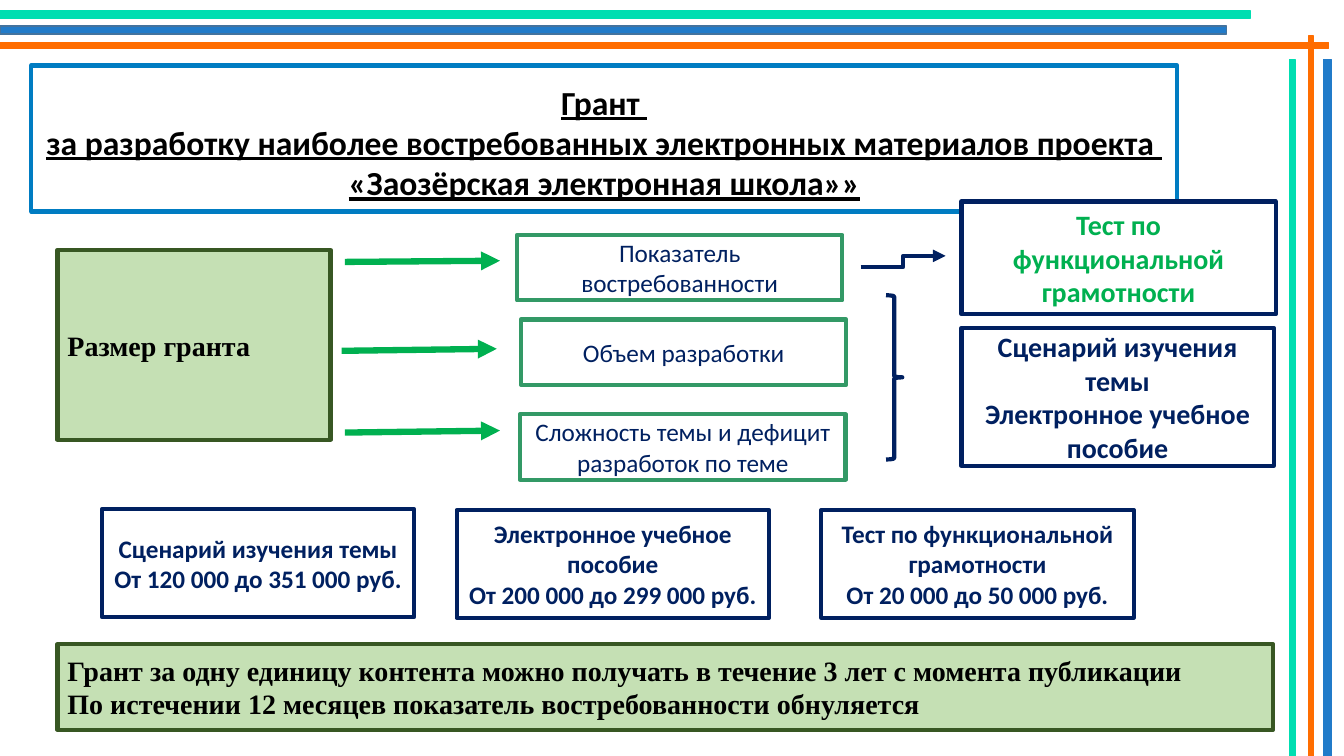
import pptx
import pptx.dml.color
import pptx.enum.dml
import pptx.enum.shapes
import pptx.enum.text
import pptx.oxml
import pptx.oxml.ns
import pptx.util
from dataclasses import dataclass

Cm = pptx.util.Cm
Preset = pptx.enum.shapes.MSO_SHAPE
Connector = pptx.enum.shapes.MSO_CONNECTOR
Align = pptx.enum.text.PP_ALIGN


@dataclass(frozen=True)
class Theme:
    teal: str = "00DEB1"
    blue: str = "217BC9"
    blue_edge: str = "43739E"
    orange: str = "FF6D00"
    title_edge: str = "007CC2"
    criterion_edge: str = "339966"
    navy: str = "002060"
    green: str = "00B050"
    pale_green: str = "C5E0B4"
    dark_green: str = "385723"
    white: str = "FFFFFF"
    black: str = "000000"
    sans: str = "Calibri"
    serif: str = "Times New Roman"
    title_size: int = 24
    large_size: int = 20
    body_size: int = 18
    bar_line: float = 1
    box_line: float = 3
    arrow_line: float = 4.5


class GrantSlide:
    def __init__(self, slide, theme):
        self.shapes = slide.shapes
        self.theme = theme

    def set_line(self, line, color, width):
        line.color.rgb = pptx.dml.color.RGBColor.from_string(color)
        line.width = pptx.util.Pt(width)

    def shape(self, place, fill, edge, width, preset=Preset.RECTANGLE):
        shape = self.shapes.add_shape(preset, *map(Cm, place))
        shape.shadow.inherit = False
        if fill:
            shape.fill.solid()
            shape.fill.fore_color.rgb = pptx.dml.color.RGBColor.from_string(fill)
        else:
            shape.fill.background()
        self.set_line(shape.line, edge, width)
        return shape

    def box(self, place, lines, fill, edge, align=Align.CENTER, **style):
        box = self.shape(place, fill, edge, self.theme.box_line)
        frame = box.text_frame
        frame.word_wrap = True
        frame.vertical_anchor = pptx.enum.text.MSO_ANCHOR.MIDDLE
        color = style.pop("color")
        size = style.pop("size")
        formats = {"name": self.theme.sans, "size": pptx.util.Pt(size), **style}
        for index, line in enumerate(lines):
            para = frame.add_paragraph() if index else frame.paragraphs[0]
            para.alignment = align
            span = para.add_run()
            span.text = line
            for key, value in formats.items():
                setattr(span.font, key, value)
            span.font.color.rgb = pptx.dml.color.RGBColor.from_string(color)
        return box

    def panel(self, place, lines):
        theme = self.theme
        self.box(place, lines, theme.pale_green, theme.dark_green, Align.LEFT,
                 name=theme.serif, size=theme.large_size, color=theme.black, bold=True)

    def arrow(self, start, end, color, width, kind=Connector.STRAIGHT):
        arrow = self.shapes.add_connector(kind, *map(Cm, start + end))
        self.set_line(arrow.line, color, width)
        namespace = pptx.oxml.ns.nsdecls("a")
        head = pptx.oxml.parse_xml(f'<a:tailEnd {namespace} type="triangle"/>')
        arrow.line._get_or_add_ln().append(head)
        properties = arrow._element.spPr
        properties.append(pptx.oxml.parse_xml(f"<a:effectLst {namespace}/>"))


def main():
    deck = pptx.Presentation()
    deck.slide_width, deck.slide_height = Cm(33.87), Cm(19.05)
    theme = Theme()
    page = GrantSlide(deck.slides.add_slide(deck.slide_layouts[6]), theme)

    # Decorative bars along the top and right edges
    for place, fill, edge in (
        ((0, 0.66, 30.91, 0.2), theme.blue, theme.blue_edge),
        ((0, 0.28, 31.52, 0.18), theme.teal, theme.teal),
        ((0, 1.07, 33.48, 0.15), theme.orange, theme.orange),
        ((33.35, 1.5, 0.2, 17.55), theme.blue, theme.blue),
        ((32.49, 1.5, 0.15, 17.55), theme.teal, theme.teal),
        ((32.97, 0.91, 0.13, 18.14), theme.orange, theme.orange),
    ):
        page.shape(place, fill, edge, theme.bar_line)

    # Title
    title = page.box(
        (0.79, 1.65, 28.88, 3.68),
        ("Грант ",
         "за разработку наиболее востребованных электронных материалов проекта ",
         "«Заозёрская электронная школа»»"),
        None, theme.title_edge, size=theme.title_size, color=theme.black,
        bold=True, underline=True)
    title.text_frame.margin_top = Cm(0.3)

    # Grant size and the criteria it depends on
    page.panel((1.45, 6.3, 6.88, 4.78), ("Размер гранта",))
    for left, top, label in (
        (13.03, 5.92, "Показатель востребованности"),
        (13.13, 8.05, "Объем разработки"),
        (13.11, 10.44, "Сложность темы и дефицит разработок по теме"),
    ):
        page.box((left, top, 8.2, 1.65), (label,), theme.white,
                 theme.criterion_edge, size=theme.body_size, color=theme.navy)
    for left, top, rise in ((8.69, 6.6, 0.03), (8.61, 8.84, 0.05), (8.69, 10.9, 0.05)):
        page.arrow((left, top), (left + 3.91, top - rise), theme.green, theme.arrow_line)

    # Links from the criteria to the material types
    page.shape((22.33, 7.44, 0.41, 4.14), None, theme.navy, theme.box_line,
               Preset.RIGHT_BRACE)
    page.arrow((21.69, 6.73), (23.83, 6.45), theme.navy, theme.box_line, Connector.ELBOW)

    # Material types
    for place, lines, color in (
        ((24.23, 8.26, 7.87, 3.48),
         ("Сценарий изучения темы", "Электронное учебное пособие"), theme.navy),
        ((24.23, 5.08, 7.92, 2.84),
         ("Тест по функциональной грамотности",), theme.green),
    ):
        page.box(place, lines, theme.white, theme.navy,
                 size=theme.large_size, color=color, bold=True)

    # Grant amounts
    for left, top, material, amount in (
        (2.57, 12.83, "Сценарий изучения темы", "От 120 000 до 351 000 руб."),
        (11.51, 12.85, "Электронное учебное пособие", "От 200 000 до 299 000 руб."),
        (20.7, 12.85, "Тест по функциональной грамотности", "От 20 000 до 50 000 руб."),
    ):
        page.box((left, top, 7.87, 2.72), (material, amount), theme.white, theme.navy,
                 size=theme.body_size, color=theme.navy, bold=True)

    # Terms of the grant
    page.panel(
        (1.45, 16.23, 30.63, 2.16),
        ("Грант за одну единицу контента можно получать в течение 3 лет с момента публикации",
         "По истечении 12 месяцев показатель востребованности обнуляется"))

    deck.save("out.pptx")


if __name__ == "__main__":
    main()
